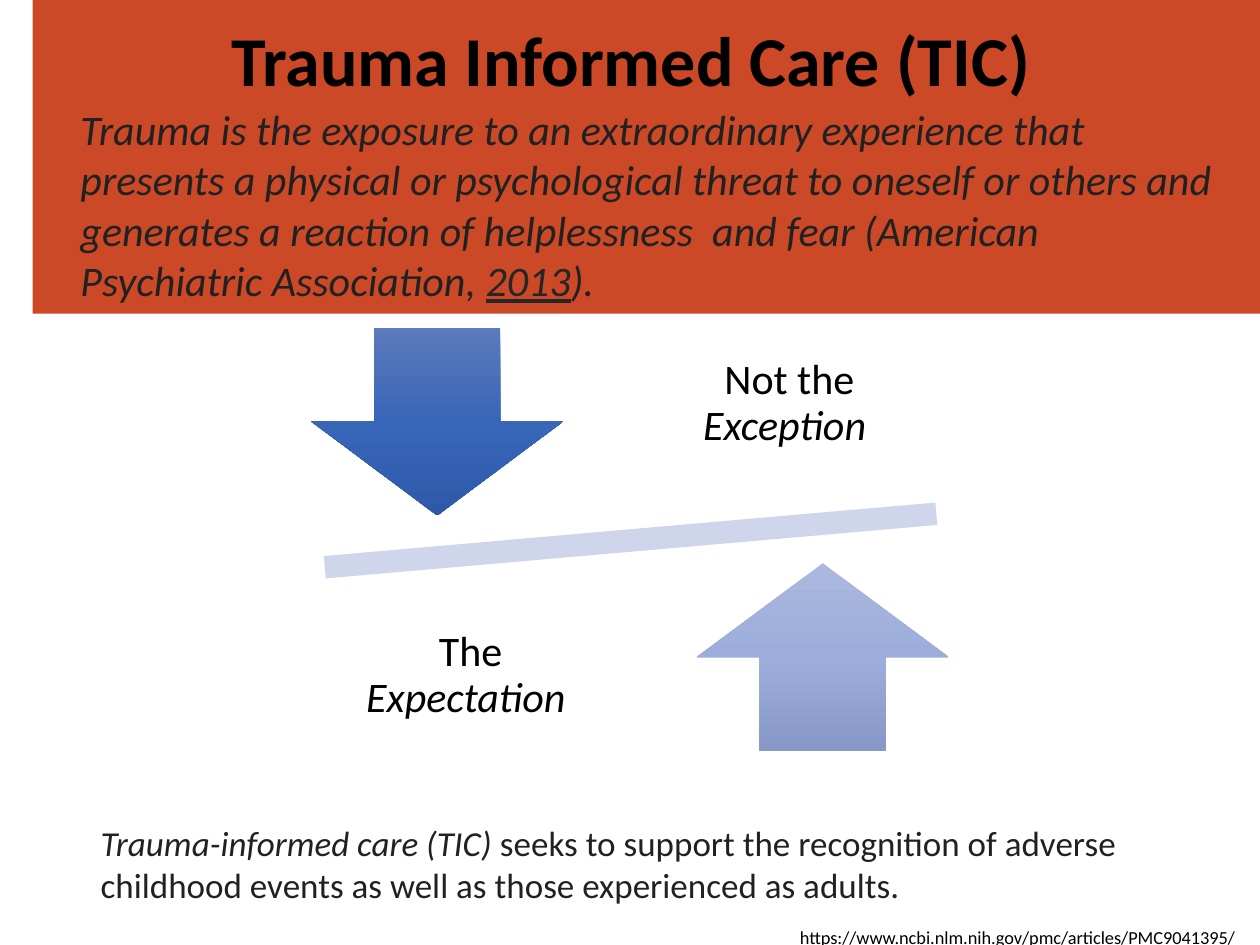
from copy import deepcopy

from pptx import Presentation
from pptx.dml.color import RGBColor
from pptx.enum.shapes import MSO_SHAPE
from pptx.enum.text import MSO_ANCHOR, MSO_AUTO_SIZE, PP_ALIGN
from pptx.oxml.ns import qn
from pptx.util import Emu, Pt

SCALE = 9144
BLACK, DARK = "000000", "212121"


def px(n):
    """Turn px (100 to the inch) into EMU."""
    return Emu(n * SCALE)


def tint(code):
    """Make a colour from a hex string."""
    return RGBColor.from_string(code)


def style(font, size, color):
    """Set the face, size and colour of a font."""
    font.name, font.size = "Calibri", Pt(size)
    font.color.rgb = tint(color)


def add_form(slide, kind, box, color=None):
    """Add a preset shape with no line or shadow."""
    shape = slide.shapes.add_shape(kind, *map(px, box))
    shape.shadow.inherit = False
    shape.line.fill.background()
    if color:
        shape.fill.solid()
        shape.fill.fore_color.rgb = tint(color)
    return shape


def add_text(slide, box, parts, size, color):
    """Add a wrapped text box; parts are (words, italic) pairs."""
    area = slide.shapes.add_textbox(*map(px, box))
    frame = area.text_frame
    frame.word_wrap = True
    frame.auto_size = MSO_AUTO_SIZE.SHAPE_TO_FIT_TEXT
    para = frame.paragraphs[0]
    style(para.font, size, color)
    for words, slant in parts:
        run = para.add_run()
        run.text = words
        style(run.font, size, color)
        run.font.italic = slant
    return frame


def add_label(slide, box, plain, slant):
    """Add a centred label that ends in an italic word."""
    frame = add_text(slide, box, [(plain, False), (slant, True)], 24, BLACK)
    frame.auto_size = MSO_AUTO_SIZE.NONE
    frame.vertical_anchor = MSO_ANCHOR.MIDDLE
    frame.margin_left = frame.margin_right = px(19)
    frame.margin_top = frame.margin_bottom = px(19)
    para = frame.paragraphs[0]
    para.alignment, para.line_spacing = PP_ALIGN.CENTER, 0.9


def add_arrow(slide, kind, box, colors):
    """Add an arrow shaded from top to bottom in three colours."""
    fill = add_form(slide, kind, box).fill
    fill.gradient()
    fill.gradient_angle = 270
    stops = slide.shapes[-1]._element.spPr.find(qn("a:gradFill")).find(qn("a:gsLst"))
    stops.insert(1, deepcopy(stops[0]))
    for n, (stop, color) in enumerate(zip(fill.gradient_stops, colors)):
        stop.position = n / 2
        stop.color.rgb = tint(color)


def add_head(slide, box):
    """Place the band with the title and the definition."""
    left, top, wide, high = box
    band = add_form(slide, MSO_SHAPE.RECTANGLE, box, "CC4927")
    title = slide.shapes.title
    title._element.addprevious(band._element)
    title.left, title.top = px(left + 58), px(top - 37)
    title.width, title.height = px(833), px(123)
    frame = title.text_frame
    frame.text = "Trauma Informed Care (TIC)"
    frame.auto_size = MSO_AUTO_SIZE.NONE
    frame.vertical_anchor = MSO_ANCHOR.BOTTOM
    para = frame.paragraphs[0]
    para.alignment, para.line_spacing = PP_ALIGN.CENTER, 0.9
    style(para.font, 40, BLACK)
    para.font.bold = True
    parts = [
        ("Trauma is the exposure to an extraordinary experience that presents "
         "a physical or psychological threat to oneself or others and generates "
         "a reaction of helplessness  and fear (American Psychiatric "
         "Association,\u00a0".replace("\u00a0", " "), True),
        ("2013", True),
        (").", True),
    ]
    area = (left + 28, top + 77, wide - 44, high - 77)
    year = add_text(slide, area, parts, 24, DARK).paragraphs[0].runs[1].font
    year.underline = True
    year.color.rgb = tint("262626")


def add_scale(slide, box):
    """Place the tilted bar with an arrow and a label on each side."""
    left, top, wide, high = box
    bar = add_form(slide, MSO_SHAPE.MATH_MINUS,
                   (left, top + 149, wide, 76), "CFD5EA")
    bar.rotation = 355
    add_arrow(slide, MSO_SHAPE.DOWN_ARROW, (left + 78, top + 18, 200, 149),
              ("5C7ABD", "3866B8", "2D59A8"))
    add_label(slide, (left + 351, top, 213, 157), "Not the ", "Exception ")
    add_arrow(slide, MSO_SHAPE.UP_ARROW,
              (left + wide - 279, top + high - 168, 200, 149),
              ("ABB8DD", "9CADDB", "8798C6"))
    add_label(slide, (left + 98, top + high - 157, 213, 157),
              "The ", "Expectation ")


def add_foot(slide, box):
    """Place the closing statement and the source address."""
    left, top, wide, high = box
    parts = [
        ("Trauma-informed care (TIC) ", True),
        ("seeks to support the recognition of adverse childhood events "
         "as well as those experienced as adults.", False),
    ]
    add_text(slide, (left, top, wide, 77), parts, 20, DARK)
    link = "https://www.ncbi.nlm.nih.gov/pmc/articles/PMC9041395/"
    add_text(slide, (left + 555, top + high - 29, 500, 29),
             [(link, False)], 10.5, BLACK)


def main():
    """Build and save the slide."""
    deck = Presentation()
    deck.slide_width, deck.slide_height = px(1000), px(750)
    slide = deck.slides.add_slide(deck.slide_layouts[5])
    add_head(slide, (26, 0, 974, 249))
    add_scale(slide, (169, 242, 663, 373))
    add_foot(slide, (70, 647, 898, 112))
    deck.save("out.pptx")


if __name__ == "__main__":
    main()
